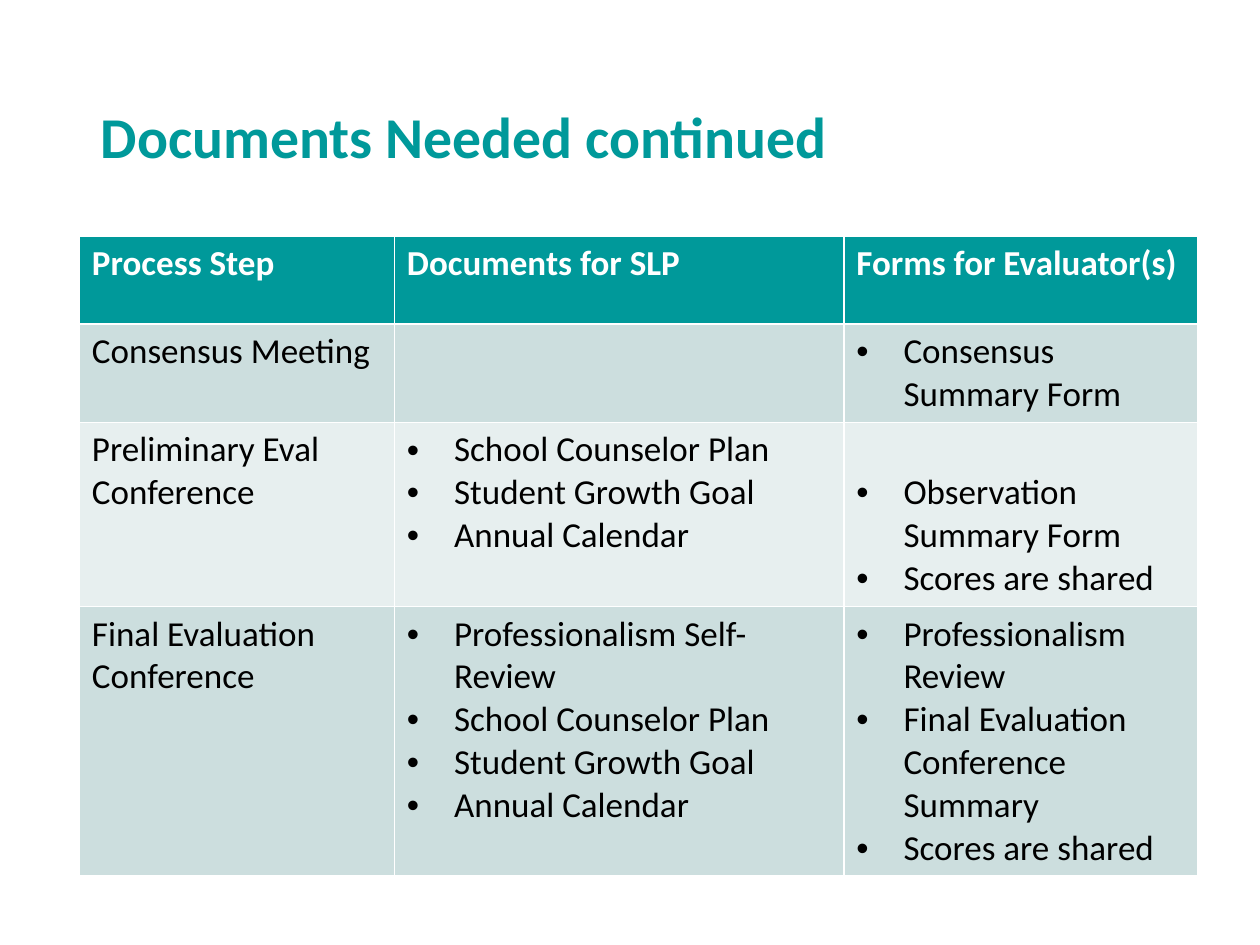
from lxml.etree import SubElement
from pptx import Presentation
from pptx.dml.color import RGBColor
from pptx.enum.text import MSO_ANCHOR, PP_ALIGN
from pptx.oxml.ns import qn
from pptx.util import Cm, Pt

TITLE = "Documents Needed continued"
HEADER = ["Process Step", "Documents for SLP", "Forms for Evaluator(s)"]
# Each step: name, documents, forms
STEPS = [
    ("Consensus Meeting", [], ["Consensus Summary Form"]),
    ("Preliminary Eval Conference",
     ["School Counselor Plan", "Student Growth Goal", "Annual Calendar"],
     ["Observation Summary Form", "Scores are shared"]),
    ("Final Evaluation Conference",
     ["Professionalism Self-Review", "School Counselor Plan",
      "Student Growth Goal", "Annual Calendar"],
     ["Professionalism Review", "Final Evaluation Conference Summary",
      "Scores are shared"]),
]
COL_WIDTHS = [6.35, 9.06, 7.13]
ROW_HEIGHTS = [1.77, 1.98, 3.71, 5.43]
LOWERED_CELL = (2, 2)  # its list starts one line down
LINE_HEIGHT = 0.86
INDENT = 0.95
TEAL, WHITE, BLACK = "00999A", "FFFFFF", "000000"
BANDS = ["CCDEDE", "E7EFEF"]


def rgb(value):
    return RGBColor.from_string(value)


def format_text(p, size, color, bold):
    for r in p.runs:
        r.font.name = "Calibri"
        r.font.size = Pt(size)
        r.font.bold = bold
        r.font.color.rgb = rgb(color)


def add_bullet(p):
    pPr = p._p.get_or_add_pPr()
    pPr.set("marL", str(Cm(INDENT)))
    pPr.set("indent", str(-Cm(INDENT)))
    SubElement(pPr, qn("a:buFont"), typeface="Arial")
    SubElement(pPr, qn("a:buChar"), char="•")


def fill_cell(cell, content, fill, color, bold):
    """Write a string as plain text, or a list as bullets."""
    cell.fill.solid()
    cell.fill.fore_color.rgb = rgb(fill)
    bulleted = isinstance(content, list)
    cell.text_frame.text = "\n".join(content) if bulleted else content
    for p in cell.text_frame.paragraphs:
        if bulleted and content:
            add_bullet(p)
        format_text(p, 20, color, bold)


prs = Presentation()
prs.slide_width, prs.slide_height = Cm(25.4), Cm(19.05)
s = prs.slides.add_slide(prs.slide_layouts[5])

title = s.shapes.title
title.left, title.top, title.width, title.height = Cm(2.03), Cm(1.04), Cm(20.83), Cm(2.39)
tf = title.text_frame
tf.text = TITLE
tf.word_wrap = True
tf.vertical_anchor = MSO_ANCHOR.BOTTOM
tf.margin_left = tf.margin_right = tf.margin_top = tf.margin_bottom = 0
p = tf.paragraphs[0]
p.alignment = PP_ALIGN.LEFT
p.line_spacing = 0.85
format_text(p, 33, TEAL, True)

table = s.shapes.add_table(
    len(STEPS) + 1, len(HEADER), Cm(1.6), Cm(4.76),
    Cm(sum(COL_WIDTHS)), Cm(sum(ROW_HEIGHTS))).table
for column, width in zip(table.columns, COL_WIDTHS):
    column.width = Cm(width)
for row, height in zip(table.rows, ROW_HEIGHTS):
    row.height = Cm(height)

for i, contents in enumerate([HEADER, *STEPS]):
    is_header = i == 0
    fill = TEAL if is_header else BANDS[(i - 1) % 2]
    for j, content in enumerate(contents):
        fill_cell(table.cell(i, j), content, fill,
                  WHITE if is_header else BLACK, is_header)
table.cell(*LOWERED_CELL).margin_top = Cm(0.13 + LINE_HEIGHT)

prs.save("out.pptx")
